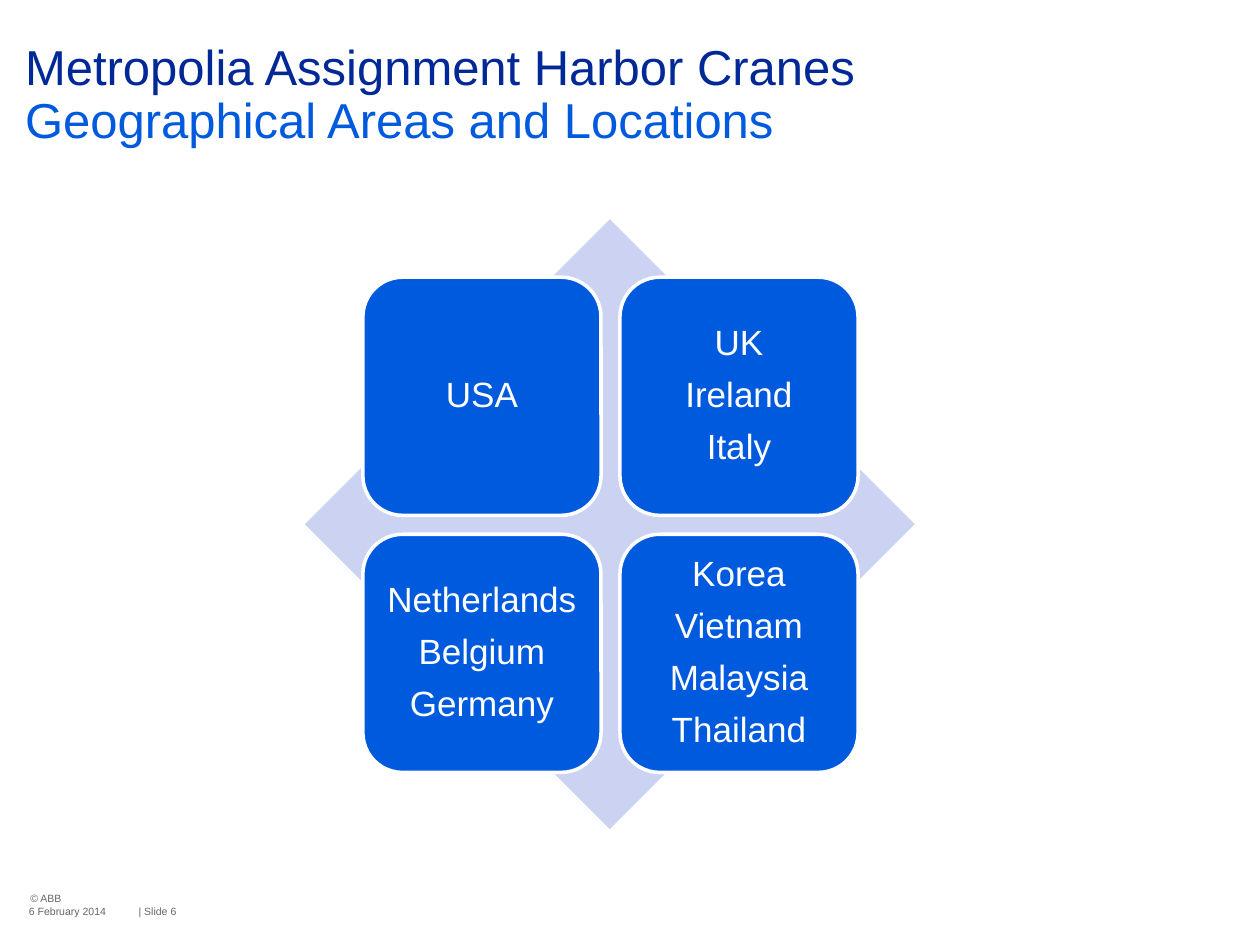
from pptx import Presentation
from pptx import util as u
from pptx.dml.color import RGBColor
from pptx.enum import shapes, text

NAVY = RGBColor(0x00, 0x28, 0x97)
BLUE = RGBColor(0x00, 0x5A, 0xDE)
LAVENDER = RGBColor(0xCC, 0xD2, 0xF2)
GREY = RGBColor(0x66, 0x66, 0x66)
WHITE = RGBColor(0xFF, 0xFF, 0xFF)

REGIONS = [
    [["USA"], ["UK", "Ireland", "Italy"]],
    [["Netherlands", "Belgium", "Germany"],
     ["Korea", "Vietnam", "Malaysia", "Thailand"]],
]
TILE_LEFT, TILE_TOP = 2.88, 2.2
TILE_SIZE, TILE_PITCH = 1.89, 2.04


class SlideBuilder:
    """Holds the text style and the slide being filled."""

    font_name = "Arial"

    def __init__(self, slide):
        self.slide = slide

    def style_run(self, run, size, color):
        run.font.name = self.font_name
        run.font.size = u.Pt(size)
        run.font.color.rgb = color

    def set_insets(self, frame, left, top, right, bottom):
        frame.margin_left, frame.margin_top = u.Inches(left), u.Inches(top)
        frame.margin_right, frame.margin_bottom = u.Inches(right), u.Inches(bottom)

    def textbox(self, box, content, size, colors, insets=(0, 0, 0, 0),
                wrap=True, line_spacing=None):
        """Add a one-paragraph box; each line takes its own colour."""
        frame = self.slide.shapes.add_textbox(*map(u.Inches, box)).text_frame
        frame.word_wrap = wrap
        self.set_insets(frame, *insets)
        paragraph = frame.paragraphs[0]
        paragraph.text = content
        paragraph.line_spacing = line_spacing
        for run, color in zip(paragraph.runs, colors):
            self.style_run(run, size, color)

    def shape(self, preset, box, fill):
        shape = self.slide.shapes.add_shape(preset, *map(u.Inches, box))
        shape.shadow.inherit = False
        shape.fill.solid()
        shape.fill.fore_color.rgb = fill
        shape.line.fill.background()
        return shape

    def tile(self, box, countries):
        tile = self.shape(shapes.MSO_SHAPE.ROUNDED_RECTANGLE, box, BLUE)
        tile.line.color.rgb = WHITE
        tile.line.width = u.Pt(2)
        frame = tile.text_frame
        frame.word_wrap = True
        frame.vertical_anchor = text.MSO_ANCHOR.MIDDLE
        self.set_insets(frame, 0.08, 0.08, 0.08, 0.08)
        frame.text = "\n".join(countries)
        for paragraph in frame.paragraphs:
            paragraph.alignment = text.PP_ALIGN.CENTER
            paragraph.line_spacing = 0.9
            paragraph.space_after = u.Pt(8)
            self.style_run(paragraph.runs[0], 20, WHITE)


def main():
    prs = Presentation()
    prs.slide_width, prs.slide_height = u.Inches(10), u.Inches(7.5)
    builder = SlideBuilder(prs.slides.add_slide(prs.slide_layouts[6]))

    builder.textbox((0.24, 7.08, 1.22, 0.1), "© ABB", 6, [GREY], wrap=False)
    builder.textbox((0, 0, 10, 1.74),
                    "Metropolia Assignment Harbor Cranes\vGeographical Areas and Locations",
                    28, [NAVY, BLUE], insets=(0.2, 0.34, 0.24, 0), line_spacing=0.9)
    builder.textbox((0.23, 7.18, 0.87, 0.11), "6 February 2014", 6, [GREY], wrap=False)
    builder.textbox((1.1, 7.18, 0.51, 0.11), "| Slide 6", 6, [GREY])

    builder.shape(shapes.MSO_SHAPE.DIAMOND, (2.42, 1.74, 4.84, 4.84), LAVENDER)
    for row, regions in enumerate(REGIONS):
        for column, countries in enumerate(regions):
            builder.tile((TILE_LEFT + column * TILE_PITCH, TILE_TOP + row * TILE_PITCH,
                          TILE_SIZE, TILE_SIZE), countries)

    prs.save("out.pptx")


if __name__ == "__main__":
    main()
